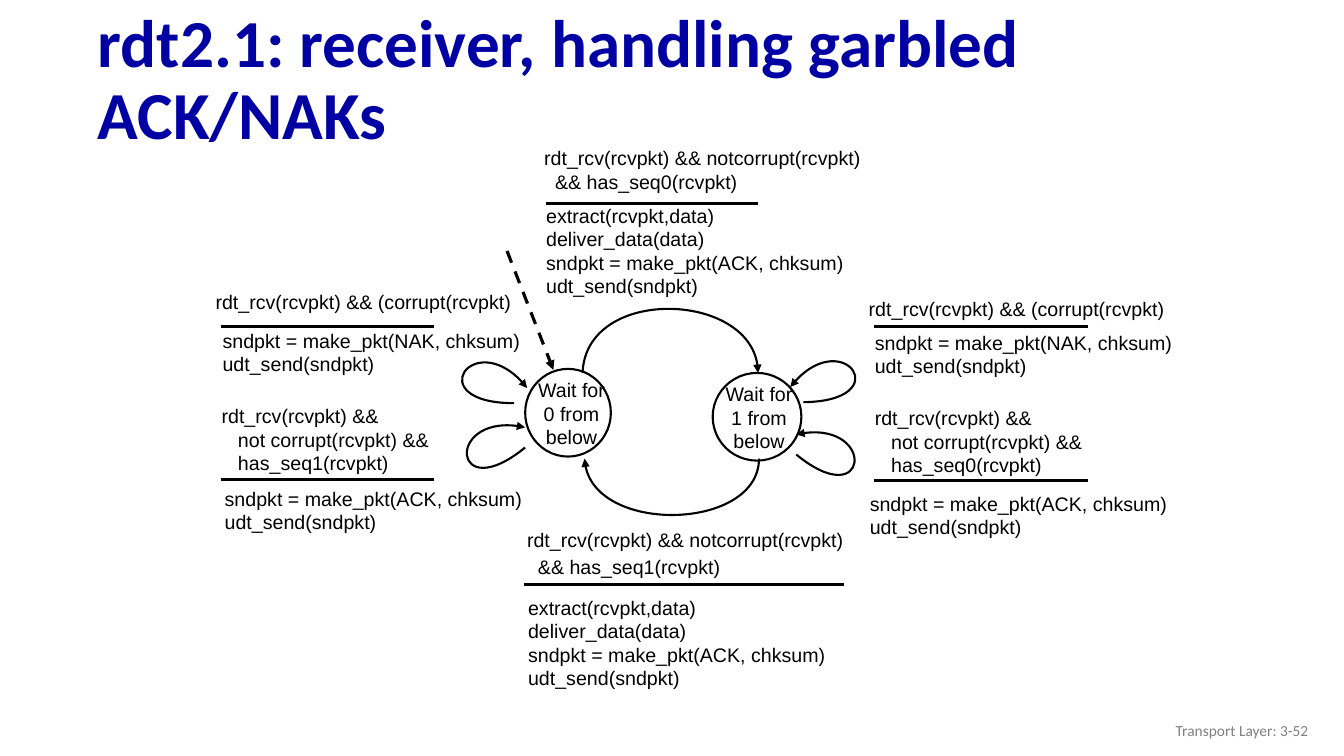
from dataclasses import dataclass

from pptx import Presentation
from pptx.dml.color import RGBColor
from pptx.enum.dml import MSO_LINE
from pptx.enum.shapes import MSO_CONNECTOR, MSO_SHAPE
from pptx.enum.text import MSO_ANCHOR, MSO_AUTO_SIZE, PP_ALIGN
from pptx.oxml.ns import qn
from pptx.oxml.xmlchemy import OxmlElement
from pptx.util import Inches, Pt


@dataclass(frozen=True)
class Theme:
    heading_font: str = "Calibri"
    label_font: str = "Arial"
    heading: RGBColor = RGBColor(0x00, 0x00, 0xA3)
    ink: RGBColor = RGBColor(0x00, 0x00, 0x00)
    paper: RGBColor = RGBColor(0xFF, 0xFF, 0xFF)
    footer: RGBColor = RGBColor(0x80, 0x80, 0x80)
    title_size: int = 48
    label_size: int = 14
    footer_size: int = 11
    thin: float = 1.5
    thick: float = 2.25
    space_width: float = 3.9  # points, one space of a label


THEME = Theme()


def cells(count):
    """Length of a number of grid cells; the slide has 133.3 columns and 75 rows."""
    return Inches(round(count / 10, 3))


def place(shape, left, top, width, height):
    shape.left, shape.top = cells(left), cells(top)
    shape.width, shape.height = cells(width), cells(height)


def add_run(paragraph, text, font, size, color, bold=False):
    run = paragraph.add_run()
    run.text = text
    run.font.name, run.font.size, run.font.bold = font, Pt(size), bold
    run.font.color.rgb = color


def add_title(slide, text):
    title = slide.shapes.title
    place(title, 8.7, 3.2, 121.4, 9.8)
    frame = title.text_frame
    frame.auto_size, frame.word_wrap = MSO_AUTO_SIZE.NONE, True
    frame.vertical_anchor = MSO_ANCHOR.MIDDLE
    paragraph = frame.paragraphs[0]
    paragraph.alignment, paragraph.line_spacing = PP_ALIGN.LEFT, 0.9
    add_run(paragraph, text, THEME.heading_font, THEME.title_size, THEME.heading, True)


def add_text_box(slide, box):
    frame = slide.shapes.add_textbox(*map(cells, box)).text_frame
    frame.word_wrap = True
    return frame


def add_label(slide, box, lines, align=PP_ALIGN.LEFT, indent=0, gap=0):
    """Lines after the first are indented by a number of spaces."""
    frame = add_text_box(slide, box)
    for index, line in enumerate(lines):
        paragraph = frame.add_paragraph() if index else frame.paragraphs[0]
        paragraph.alignment, paragraph.line_spacing = align, 1.0
        if index and indent:
            margin = Pt(indent * THEME.space_width)
            paragraph._p.get_or_add_pPr().set("marL", str(margin))
        if index and gap:
            paragraph.space_before = Pt(gap)
        add_run(paragraph, line, THEME.label_font, THEME.label_size, THEME.ink)


def style_line(shape, width, arrow=False, dashed=False):
    shape.line.color.rgb, shape.line.width = THEME.ink, Pt(width)
    if dashed:
        shape.line.dash_style = MSO_LINE.DASH
    if arrow:
        head = OxmlElement("a:tailEnd")
        head.set("type", "triangle")
        shape.line._get_or_add_ln().append(head)


def add_line(slide, ends, **style):
    line = slide.shapes.add_connector(MSO_CONNECTOR.STRAIGHT, *map(cells, ends))
    style_line(line, THEME.thick, **style)
    line._element.spPr.append(OxmlElement("a:effectLst"))


def add_curved_arrow(slide, points):
    """One cubic curve through start, two control points and end."""
    start, *others = [(cells(x), cells(y)) for x, y in points]
    builder = slide.shapes.build_freeform(*start)
    builder.add_line_segments(others, close=False)
    arrow = builder.convert_to_shape()
    path = next(arrow._element.iter(qn("a:path")))
    curve = OxmlElement("a:cubicBezTo")
    for segment in path.findall(qn("a:lnTo")):
        curve.append(segment[0])
        path.remove(segment)
    path.append(curve)
    arrow.fill.background()
    arrow.shadow.inherit = False
    style_line(arrow, THEME.thin, arrow=True)


def add_state(slide, left, top, width, lines):
    circle = slide.shapes.add_shape(MSO_SHAPE.OVAL, *map(cells, (left, top, width, 8.7)))
    circle.fill.solid()
    circle.fill.fore_color.rgb = THEME.paper
    circle.shadow.inherit = False
    style_line(circle, THEME.thin)
    add_label(slide, (left + 0.2, top + 0.4, 8.8, 6.7), lines, PP_ALIGN.CENTER)


def add_transition(slide, event, event_box, bar, action, action_box, curve,
                   indent=0, gap=0):
    """Event above a bar, action below it, and the arrow they belong to."""
    add_curved_arrow(slide, curve)
    add_label(slide, event_box, event, indent=indent, gap=gap)
    left, right, height = bar
    add_line(slide, (left, height, right, height))
    add_label(slide, action_box, action)


def add_footer(slide, text):
    frame = add_text_box(slide, (100.8, 70.5, 30, 4))
    frame.vertical_anchor = MSO_ANCHOR.MIDDLE
    paragraph = frame.paragraphs[0]
    paragraph.alignment = PP_ALIGN.RIGHT
    add_run(paragraph, text, THEME.heading_font, THEME.footer_size, THEME.footer)


def reply(kind):
    return [f"sndpkt = make_pkt({kind}, chksum)", "udt_send(sndpkt)"]


def good_packet(number):
    return ["rdt_rcv(rcvpkt) && notcorrupt(rcvpkt)", f"&& has_seq{number}(rcvpkt)"]


def duplicate(number):
    return ["rdt_rcv(rcvpkt) &&", "not corrupt(rcvpkt) &&", f"has_seq{number}(rcvpkt)"]


CORRUPT = ["rdt_rcv(rcvpkt) && (corrupt(rcvpkt)"]
DELIVER = ["extract(rcvpkt,data)", "deliver_data(data)", *reply("ACK")]


def main():
    presentation = Presentation()
    presentation.slide_width, presentation.slide_height = cells(133.33), cells(75)
    slide = presentation.slides.add_slide(presentation.slide_layouts[5])
    add_title(slide, "rdt2.1: receiver, handling garbled ACK/NAKs")

    # States and the start arrow
    add_state(slide, 52.1, 36.6, 8.5, ["Wait for", "0 from below"])
    add_state(slide, 70.7, 37, 8.8, ["Wait for", "1 from below"])
    add_line(slide, (50.3, 24.9, 54.9, 36.7), arrow=True, dashed=True)

    # Transitions between the states
    add_transition(slide, good_packet(0), (53, 14, 43.5, 6.2), (54.2, 75.2, 20.2),
                   DELIVER, (53.2, 19.7, 38, 7.7),
                   [(57.8, 37), (58.1, 28.4), (75.2, 28.9), (75.2, 37)], indent=2)
    add_transition(slide, good_packet(1), (51.3, 51.9, 39.2, 6.2), (52, 83.7, 58),
                   DELIVER, (51.4, 58.6, 42.1, 10.9),
                   [(75.3, 45.5), (75.3, 52.6), (58.3, 53.1), (58, 45.5)],
                   indent=2, gap=2)

    # Loops on the right state
    add_transition(slide, CORRUPT, (85.2, 29, 31.4, 6.7), (86.7, 107.9, 32.4),
                   reply("NAK"), (85.8, 32.3, 33.1, 4.5),
                   [(79.7, 39.9), (89, 39.8), (83.5, 31.9), (78.4, 38.4)])
    add_transition(slide, duplicate(0), (85.8, 39.8, 28.7, 6.7), (86.7, 107.9, 47.7),
                   reply("ACK"), (85.3, 48.3, 32.2, 4.5),
                   [(79, 45.1), (86.2, 51), (87, 41.4), (79, 43.1)], indent=3)

    # Loops on the left state
    add_transition(slide, CORRUPT, (20.4, 28.3, 31.4, 6.7), (21.9, 43.1, 32.4),
                   reply("NAK"), (21.1, 32.1, 33.1, 4.5),
                   [(51, 40), (41.7, 40), (47.2, 32), (52.3, 38.5)])
    add_transition(slide, duplicate(1), (21, 39.6, 28.7, 6.7), (21.9, 43.1, 47.6),
                   reply("ACK"), (21.3, 47.8, 32.2, 4.5),
                   [(52.1, 44.4), (44.9, 50.3), (44.1, 40.7), (52.1, 42.4)], indent=3)

    add_footer(slide, "Transport Layer: 3-52")
    presentation.save("out.pptx")


if __name__ == "__main__":
    main()
